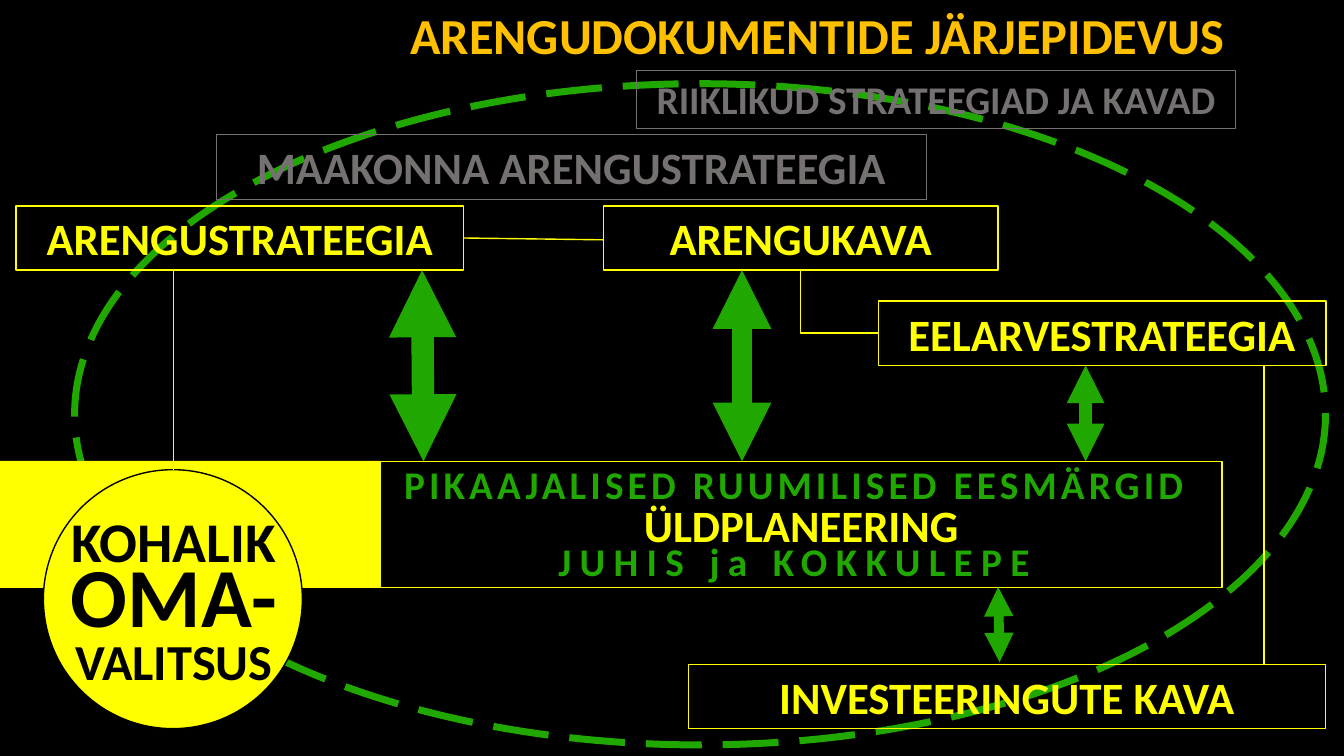
from pptx import Presentation
from pptx.dml.color import RGBColor
from pptx.enum import dml, shapes, text
from pptx.oxml import ns
from pptx.util import Pt
from lxml import etree

BLACK = RGBColor(0x00, 0x00, 0x00)
YELLOW = RGBColor(0xFF, 0xFF, 0x00)
GREEN = RGBColor(0x20, 0xA8, 0x00)
GREY = RGBColor(0x76, 0x71, 0x71)
AMBER = RGBColor(0xFF, 0xC0, 0x00)
FONT = "Calibri"
FORM = shapes.MSO_SHAPE
KIND = shapes.MSO_CONNECTOR
ALIGN = text.PP_ALIGN


def style(font, size, color):
    font.name = FONT
    font.size = Pt(size)
    font.bold = True
    font.color.rgb = color


def write(para, words, size, color, align=ALIGN.CENTER):
    para.text = words
    para.alignment = align
    style(para.font, size, color)


def shape(slide, form, box, fill=None, line=None, width=1):
    item = slide.shapes.add_shape(form, *map(Pt, box))
    item.shadow.inherit = False
    if fill is None:
        item.fill.background()
    else:
        item.fill.solid()
        item.fill.fore_color.rgb = fill
    if line is None:
        item.line.fill.background()
    else:
        item.line.color.rgb = line
        item.line.width = Pt(width)
    return item


def panel(slide, words, box, size=32, color=YELLOW, width=1):
    item = shape(slide, FORM.RECTANGLE, box, line=color, width=width)
    frame = item.text_frame
    frame.word_wrap = True
    frame.vertical_anchor = text.MSO_ANCHOR.MIDDLE
    write(frame.paragraphs[0], words, size, color)


def label(slide, box, wrap):
    frame = slide.shapes.add_textbox(*map(Pt, box)).text_frame
    frame.word_wrap = wrap
    return frame


def spaced(slide, words, box, gap):
    para = label(slide, box, False).paragraphs[0]
    write(para, words, 28, GREEN, ALIGN.LEFT)
    # Letter spacing is in hundredths of a point
    para.runs[0].font._element.set("spc", str(gap * 100))


def link(slide, start, end, kind=KIND.STRAIGHT, color=YELLOW, width=1):
    item = slide.shapes.add_connector(kind, *map(Pt, start + end))
    item.line.color.rgb = color
    item.line.width = Pt(width)
    etree.SubElement(item._element.spPr, ns.qn("a:effectLst"))
    return item


def elbow(slide, start, end):
    item = link(slide, start, end, KIND.ELBOW)
    item._element.spPr.find(ns.qn("a:prstGeom")).set("prst", "bentConnector2")


def arrow(slide, start, end, width):
    item = link(slide, start, end, color=GREEN, width=width)
    line = item.line._get_or_add_ln()
    for tip in ("headEnd", "tailEnd"):
        etree.SubElement(line, ns.qn("a:" + tip), type="triangle")


def title(slide, words):
    item = slide.shapes.title
    item.left, item.top, item.width, item.height = map(Pt, (204.5, -0.7, 677.5, 51))
    frame = item.text_frame
    frame.auto_size = text.MSO_AUTO_SIZE.NONE
    frame.word_wrap = True
    frame.vertical_anchor = text.MSO_ANCHOR.TOP
    write(frame.paragraphs[0], words, 36, AMBER, ALIGN.RIGHT)


def badge(slide):
    shape(slide, FORM.OVAL, (31, 335.5, 185, 185), YELLOW, BLACK)
    frame = label(slide, (35.3, 356.4, 177.8, 144.7), True)
    top, low = frame.paragraphs[0], frame.add_paragraph()
    for words, size in (("KOHALIK", 40), (" ", 24), ("OMA-", 60)):
        run = top.add_run()
        run.text = words
        style(run.font, size, BLACK)
    top.alignment = ALIGN.CENTER
    write(low, "VALITSUS", 36, BLACK)
    top.line_spacing, low.line_spacing = Pt(50), Pt(33)


def main():
    deck = Presentation()
    deck.slide_width, deck.slide_height = Pt(960), Pt(540)
    slide = deck.slides.add_slide(deck.slide_layouts[5])
    slide.background.fill.solid()
    slide.background.fill.fore_color.rgb = BLACK
    title(slide, "ARENGUDOKUMENTIDE JÄRJEPIDEVUS")

    # Dashed ring and the local government band
    ring = shape(slide, FORM.OVAL, (53.3, 59.8, 893.5, 472.3), line=GREEN, width=5)
    ring.line.dash_style = dml.MSO_LINE.LONG_DASH
    shape(slide, FORM.RECTANGLE, (0, 329.3, 271.8, 90.7), YELLOW)
    panel(slide, "ÜLDPLANEERING", (271.8, 329.6, 601.2, 90))
    badge(slide)

    # Document boxes
    for words, box in (
        ("ARENGUSTRATEEGIA", (11.5, 147, 319.7, 46)),
        ("ARENGUKAVA", (431, 147, 282, 46)),
        ("EELARVESTRATEEGIA", (627.4, 215, 319.7, 46)),
        ("INVESTEERINGUTE KAVA", (491.8, 474.5, 455, 46)),
    ):
        panel(slide, words, box)
    panel(slide, "MAAKONNA ARENGUSTRATEEGIA", (154.8, 96.3, 507, 46), 32, GREY, 0.75)
    panel(slide, "RIIKLIKUD STRATEEGIAD JA KAVAD", (454.5, 50.3, 428, 41.2), 28, GREY, 0.75)

    # Thin links
    link(slide, (123.8, 335.5), (123.8, 193))
    link(slide, (331.2, 170), (431, 171.3))
    link(slide, (903, 474.5), (903, 261))
    elbow(slide, (627.4, 238), (571.7, 193))

    # Double arrows to the master plan
    arrow(slide, (775.5, 261), (775.5, 329.6), 9)
    arrow(slide, (714, 473), (713, 419.3), 7)
    arrow(slide, (530, 329.6), (530, 193), 14)
    arrow(slide, (302.5, 329.6), (301.5, 193), 16)

    # Goals around the master plan
    spaced(slide, "JUHIS ja KOKKULEPE", (391.7, 380.2, 361.4, 41.2), 6)
    spaced(slide, "PIKAAJALISED RUUMILISED EESMÄRGID", (281.5, 325, 581.8, 41.2), 3)
    deck.save("out.pptx")


if __name__ == "__main__":
    main()
